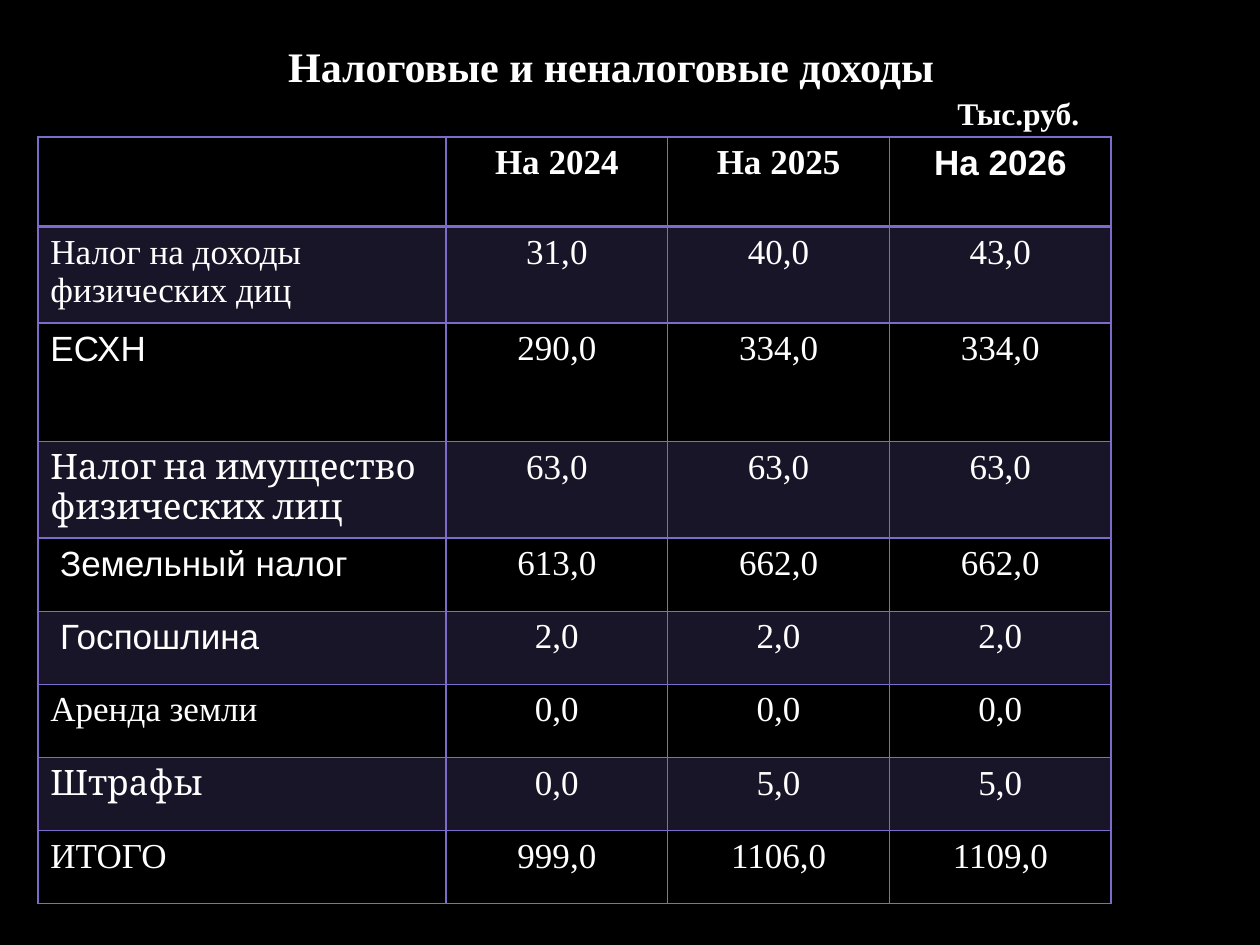
import pptx
import pptx.dml.color
import pptx.enum.text
import pptx.oxml
import pptx.oxml.ns
import pptx.util

COLOURS = {"page": "000000", "text": "FFFFFF", "accent": "7E6BC9"}
SERIF, SANS, BOOK = "Times New Roman", "Arial", "Cambria"
NO_STYLE = "{2D5ABB26-0587-4C30-8999-92F81FD0307C}"
ALIGN = pptx.enum.text.PP_ALIGN
ANCHOR = pptx.enum.text.MSO_ANCHOR

HEADINGS = [("На 2024", SERIF), ("На 2025", SERIF), ("На 2026", SANS)]
INCOME = [
    ("Налог на доходы физических диц", SERIF, ["31,0", "40,0", "43,0"]),
    ("ЕСХН", SANS, ["290,0", "334,0", "334,0"]),
    ("Налог на имущество физических лиц", BOOK, ["63,0", "63,0", "63,0"]),
    (" Земельный налог", SANS, ["613,0", "662,0", "662,0"]),
    (" Госпошлина", SANS, ["2,0", "2,0", "2,0"]),
    ("Аренда земли", SERIF, ["0,0", "0,0", "0,0"]),
    ("Штрафы", BOOK, ["0,0", "5,0", "5,0"]),
    ("ИТОГО", SERIF, ["999,0", "1106,0", "1109,0"]),
]
COLUMN_WIDTHS = [3.24] + [1.76] * 3
ROW_HEIGHTS = [0.71, 0.75, 0.94, 0.74] + [0.58] * 5


def colour(name):
    return pptx.dml.color.RGBColor.from_string(COLOURS[name])


class BudgetSlide:
    def __init__(self, deck):
        self.page = deck.slides.add_slide(deck.slide_layouts[6])
        self.size = (deck.slide_width, deck.slide_height)
        fill = self.page.background.fill
        fill.solid()
        fill.fore_color.rgb = colour("page")

    def place(self, left, top, width, height):
        """Turn shares of the slide into lengths."""
        wide, high = self.size
        return int(left * wide), int(top * high), int(width * wide), int(height * high)

    def add_text(self, frame, text, font, size, bold=False, align=ALIGN.LEFT):
        para = frame.paragraphs[0]
        para.alignment = align
        span = para.add_run()
        span.text = text
        span.font.name, span.font.size, span.font.bold = font, pptx.util.Pt(size), bold
        span.font.color.rgb = colour("text")

    def label(self, area, text, size, align=ALIGN.LEFT, anchor=ANCHOR.TOP):
        frame = self.page.shapes.add_textbox(*self.place(*area)).text_frame
        frame.word_wrap = True
        frame.vertical_anchor = anchor
        self.add_text(frame, text, SERIF, size, True, align)

    def outline(self, cell, top, bottom):
        """Draw the four cell borders, with top and bottom widths in points."""
        sides = {"L": 1, "R": 1, "T": top, "B": bottom}
        for position, (side, width) in enumerate(sides.items()):
            line = pptx.oxml.parse_xml(
                f'<a:ln{side} {pptx.oxml.ns.nsdecls("a")} w="{pptx.util.Pt(width)}">'
                f'<a:solidFill><a:srgbClr val="{COLOURS["accent"]}"/></a:solidFill>'
                f'</a:ln{side}>')
            cell._tc.get_or_add_tcPr().insert(position, line)

    def shade(self, cell, banded):
        if not banded:
            cell.fill.background()
            return
        cell.fill.solid()
        cell.fill.fore_color.rgb = colour("accent")
        tint = cell._tc.tcPr.find(".//" + pptx.oxml.ns.qn("a:srgbClr"))
        tint.append(pptx.oxml.parse_xml(
            f'<a:alpha {pptx.oxml.ns.nsdecls("a")} val="20000"/>'))

    def table(self, area, widths, heights, rows):
        """Fill a table from rows of (text, font) pairs; the first row is the heading."""
        frame = self.page.shapes.add_table(len(heights), len(widths), *self.place(*area))
        grid = frame.table
        grid._tbl.tblPr.find(pptx.oxml.ns.qn("a:tableStyleId")).text = NO_STYLE
        grid.horz_banding = False
        for column, width in zip(grid.columns, widths):
            column.width = pptx.util.Inches(width)
        for row, height in zip(grid.rows, heights):
            row.height = pptx.util.Inches(height)
        for r, row in enumerate(rows):
            for c, (text, font) in enumerate(row):
                cell = grid.cell(r, c)
                self.shade(cell, r % 2 == 1)
                self.outline(cell, 2 if r == 1 else 1, 2 if r == 0 else 1)
                if text:
                    align = ALIGN.CENTER if c else ALIGN.LEFT
                    self.add_text(cell.text_frame, text, font, 20, r == 0, align)


def main():
    deck = pptx.Presentation()
    deck.slide_width, deck.slide_height = pptx.util.Inches(10), pptx.util.Inches(7.5)
    slide = BudgetSlide(deck)
    slide.label((0, 0, 0.97, 0.14), "Налоговые и неналоговые доходы", 24,
                ALIGN.CENTER, ANCHOR.MIDDLE)
    rows = [[("", SERIF)] + HEADINGS]
    for name, font, amounts in INCOME:
        rows.append([(name, font)] + [(amount, SERIF) for amount in amounts])
    slide.table((0.03, 0.145, 0.85, 0.81), COLUMN_WIDTHS, ROW_HEIGHTS, rows)
    slide.label((0.75, 0.093, 0.14, 0.05), "Тыс.руб.", 18)
    deck.save("out.pptx")


if __name__ == "__main__":
    main()
